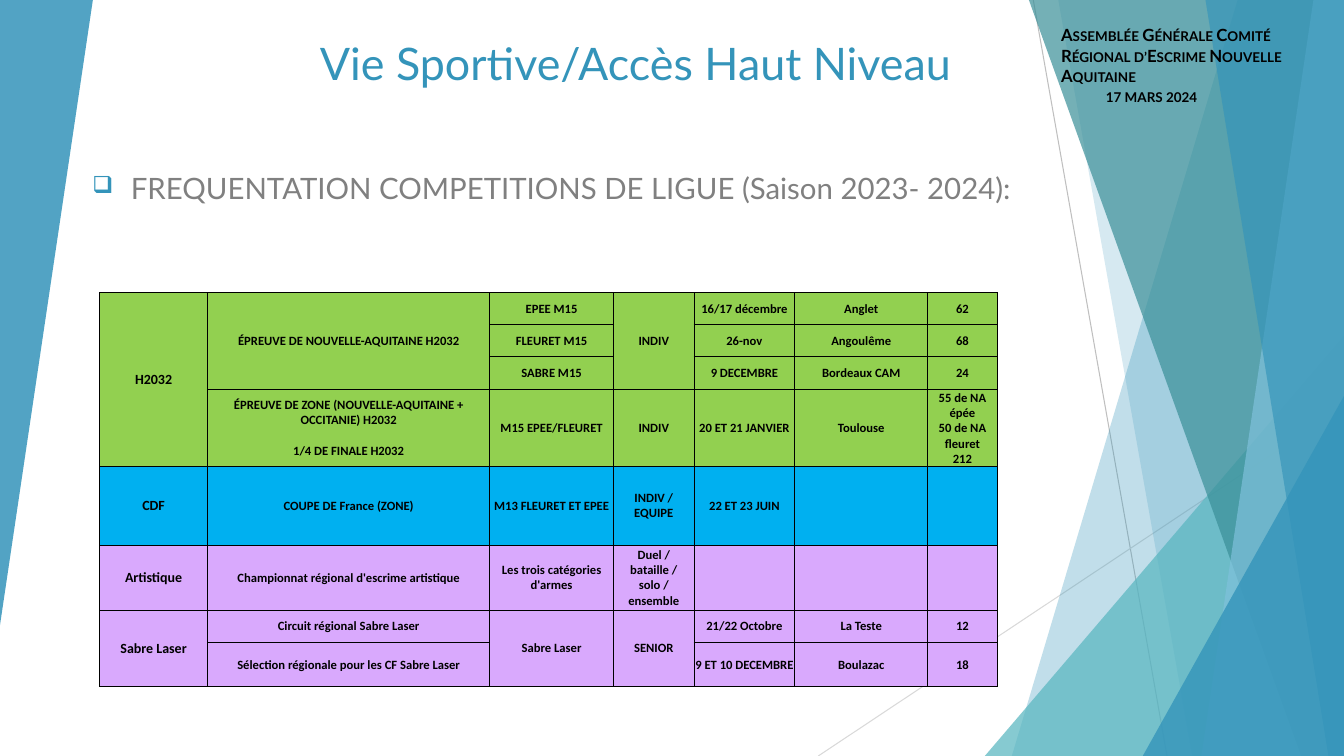
from dataclasses import dataclass

from lxml.etree import SubElement
from pptx import Presentation
from pptx.dml.color import RGBColor
from pptx.enum.shapes import MSO_CONNECTOR as Connector, MSO_SHAPE as Preset
from pptx.enum.text import MSO_ANCHOR as Anchor, PP_ALIGN as Align
from pptx.oxml.ns import qn
from pptx.util import Cm, Pt


@dataclass(frozen=True)
class Theme:
    blue: str = "3494BA"
    aqua: str = "58B6C0"
    teal: str = "3A8F98"
    sky: str = "7FC1DB"
    black: str = "000000"
    grey: str = "808080"
    line_dark: str = "BFBFBF"
    line_light: str = "D9D9D9"
    green_row: str = "92D050"
    blue_row: str = "00B0F0"
    violet_row: str = "D9A9FD"
    heading_font: str = "Lato"
    table_font: str = "Calibri"
    title_size: int = 32
    subtitle_size: int = 21
    header_size: int = 12
    category_size: int = 10
    cell_size: int = 9


THEME = Theme()
WIDTH, HEIGHT = 33.87, 19.05

# Competition table: None continues the merged cell above
COLUMNS = [2.72, 7.11, 3.12, 2.03, 2.54, 3.35, 1.75]
ROWS = [
    (0.81, THEME.green_row, ["H2032", "ÉPREUVE DE NOUVELLE-AQUITAINE H2032", "EPEE M15", "INDIV",
                             "16/17 décembre", "Anglet", "62"]),
    (0.81, THEME.green_row, [None, None, "FLEURET M15", None, "26-nov", "Angoulême", "68"]),
    (0.81, THEME.green_row, [None, None, "SABRE M15", None, "9 DECEMBRE", "Bordeaux CAM", "24"]),
    (1.94, THEME.green_row, [None, "ÉPREUVE DE ZONE (NOUVELLE-AQUITAINE + OCCITANIE) H2032\n\n"
                             "1/4 DE FINALE H2032", "M15 EPEE/FLEURET", "INDIV", "20 ET 21 JANVIER",
                             "Toulouse", "55 de NA épée\n50 de NA fleuret\n212"]),
    (1.99, THEME.blue_row, ["CDF", "COUPE DE France (ZONE)", "M13 FLEURET ET EPEE",
                            "INDIV / EQUIPE", "22 ET 23 JUIN", "", ""]),
    (1.64, THEME.violet_row, ["Artistique", "Championnat régional d'escrime artistique",
                              "Les trois catégories d'armes",
                              "Duel / bataille / solo / ensemble", "", "", ""]),
    (0.81, THEME.violet_row, ["Sabre Laser", "Circuit régional Sabre Laser", "Sabre Laser",
                              "SENIOR", "21/22 Octobre", "La Teste", "12"]),
    (1.11, THEME.violet_row, [None, "Sélection régionale pour les CF Sabre Laser", None, None,
                              "9 ET 10 DECEMBRE", "Boulazac", "18"]),
]


def paint(shape, color, opacity):
    shape.shadow.inherit = False
    shape.line.fill.background()
    shape.fill.solid()
    shape.fill.fore_color.rgb = RGBColor.from_string(color)
    color_node = shape.fill._xPr.find(".//" + qn("a:srgbClr"))
    SubElement(color_node, qn("a:alpha"), val=str(opacity * 1000))


def add_band(slide, top_x, bottom_x, color, opacity):
    """Full-height band from a slanted left edge to the slide's right edge."""
    builder = slide.shapes.build_freeform(Cm(top_x), 0)
    corners = [(WIDTH, 0), (WIDTH, HEIGHT), (bottom_x, HEIGHT)]
    builder.add_line_segments([(Cm(x), Cm(y)) for x, y in corners], close=True)
    paint(builder.convert_to_shape(), color, opacity)


def add_triangle(slide, left, top, width, height, color, opacity, rotation=0):
    triangle = slide.shapes.add_shape(
        Preset.ISOSCELES_TRIANGLE, Cm(left), Cm(top), Cm(width), Cm(height))
    triangle.adjustments[0] = 1
    triangle.rotation = rotation
    paint(triangle, color, opacity)


def add_line(slide, start, end, color):
    line = slide.shapes.add_connector(
        Connector.STRAIGHT, *(Cm(value) for value in start + end))
    line.line.color.rgb = RGBColor.from_string(color)
    line.line.width = Pt(0.75)
    SubElement(line._element.spPr, qn("a:effectLst"))


def add_run(paragraph, text, font, size, color, bold=False):
    run = paragraph.add_run()
    run.text = text
    run.font.name = font
    run.font.size = Pt(size)
    run.font.bold = bold
    run.font.color.rgb = RGBColor.from_string(color)
    return run


def add_text_box(slide, left, top, width, height, anchor=Anchor.TOP):
    frame = slide.shapes.add_textbox(Cm(left), Cm(top), Cm(width), Cm(height)).text_frame
    frame.word_wrap = True
    frame.vertical_anchor = anchor
    return frame


def set_indent(paragraph, margin, first_line=0.0):
    properties = paragraph._p.get_or_add_pPr()
    properties.set("marL", str(Cm(margin)))
    properties.set("indent", str(Cm(first_line)))
    return properties


def set_bullet(paragraph, symbol, color):
    properties = set_indent(paragraph, 0.97, -0.97)
    SubElement(SubElement(properties, qn("a:buClr")), qn("a:srgbClr"), val=color)
    SubElement(properties, qn("a:buSzPct"), val="80000")
    SubElement(properties, qn("a:buChar"), char=symbol)


def set_borders(cell, color):
    properties = cell._tc.get_or_add_tcPr()
    for side in ("lnL", "lnR", "lnT", "lnB"):
        border = SubElement(properties, qn("a:" + side), w=str(Pt(0.5)))
        SubElement(SubElement(border, qn("a:solidFill")), qn("a:srgbClr"), val=color)


def fill_cell(cell, text, size, color):
    cell.margin_left = cell.margin_right = cell.margin_top = Cm(0.03)
    cell.margin_bottom = 0
    cell.vertical_anchor = Anchor.MIDDLE
    set_borders(cell, THEME.black)
    cell.fill.solid()
    cell.fill.fore_color.rgb = RGBColor.from_string(color)
    # A double line break becomes space before the next paragraph
    for index, block in enumerate((text or "").split("\n\n")):
        for number, line in enumerate(block.split("\n")):
            first = index == number == 0
            paragraph = cell.text_frame.paragraphs[0] if first else cell.text_frame.add_paragraph()
            paragraph.alignment = Align.CENTER
            if index and not number:
                paragraph.space_before = Pt(11)
            if line:
                add_run(paragraph, line, THEME.table_font, size, THEME.black, bold=True)


def add_competition_table(slide, left, top):
    heights = [height for height, _, _ in ROWS]
    table = slide.shapes.add_table(len(ROWS), len(COLUMNS), Cm(left), Cm(top),
                                   Cm(sum(COLUMNS)), Cm(sum(heights))).table
    table.first_row = table.horz_banding = False
    for column, width in zip(table.columns, COLUMNS):
        column.width = Cm(width)
    for row_index, (height, color, texts) in enumerate(ROWS):
        table.rows[row_index].height = Cm(height)
        for column_index, text in enumerate(texts):
            size = THEME.cell_size if column_index else THEME.category_size
            fill_cell(table.cell(row_index, column_index), text, size, color)
    for column_index in range(len(COLUMNS)):
        starts = [i for i, row in enumerate(ROWS) if row[2][column_index] is not None]
        for start, following in zip(starts, starts[1:] + [len(ROWS)]):
            if following - start > 1:
                table.cell(start, column_index).merge(table.cell(following - 1, column_index))


def add_backdrop(slide):
    add_line(slide, (26.04, 0), (29.41, HEIGHT), THEME.line_dark)
    add_line(slide, (WIDTH, 10.24), (20.62, HEIGHT), THEME.line_light)
    add_band(slide, 31.19, 25.5, THEME.blue, 30)
    add_band(slide, 26.67, 30.05, THEME.blue, 20)
    add_triangle(slide, 24.82, 8.46, 9.05, 10.59, THEME.aqua, 72)
    add_band(slide, 25.93, 32.79, THEME.teal, 70)
    add_band(slide, 33.1, 30.28, THEME.sky, 70)
    add_band(slide, 30.38, 33.48, THEME.blue, 65)
    add_triangle(slide, 28.8, 9.98, 5.07, 9.07, THEME.blue, 80)
    add_triangle(slide, 0, 0, 2.34, 15.75, THEME.blue, 85, rotation=180)


def add_title(slide):
    paragraph = add_text_box(slide, 6.05, 1.14, 19.94, 1.24, Anchor.BOTTOM).paragraphs[0]
    paragraph.alignment = Align.CENTER
    add_run(paragraph, "Vie Sportive/Accès Haut Niveau", THEME.heading_font,
            THEME.title_size, THEME.blue)


def add_subtitle(slide):
    paragraph = add_text_box(slide, 2.08, 4.16, 27.56, 1.2).paragraphs[0]
    set_bullet(paragraph, "❑", THEME.blue)
    add_run(paragraph, "FREQUENTATION COMPETITIONS DE LIGUE (Saison 2023- 2024):",
            THEME.heading_font, THEME.subtitle_size, THEME.grey)


def add_meeting_header(slide):
    frame = add_text_box(slide, 26.49, 0.51, 7.37, 2.31)
    meeting, date = frame.paragraphs[0], frame.add_paragraph()
    set_indent(date, 1.13)
    for paragraph, text in (
            (meeting, "Assemblée Générale Comité Régional d’Escrime Nouvelle Aquitaine"),
            (date, "17 mars 2024")):
        run = add_run(paragraph, text, THEME.heading_font, THEME.header_size, THEME.black, bold=True)
        run.font._element.set("cap", "small")


def main():
    presentation = Presentation()
    presentation.slide_width, presentation.slide_height = Cm(WIDTH), Cm(HEIGHT)
    slide = presentation.slides.add_slide(presentation.slide_layouts[6])
    add_backdrop(slide)
    add_title(slide)
    add_subtitle(slide)
    add_competition_table(slide, 2.51, 7.37)
    add_meeting_header(slide)
    presentation.save("out.pptx")


if __name__ == "__main__":
    main()
